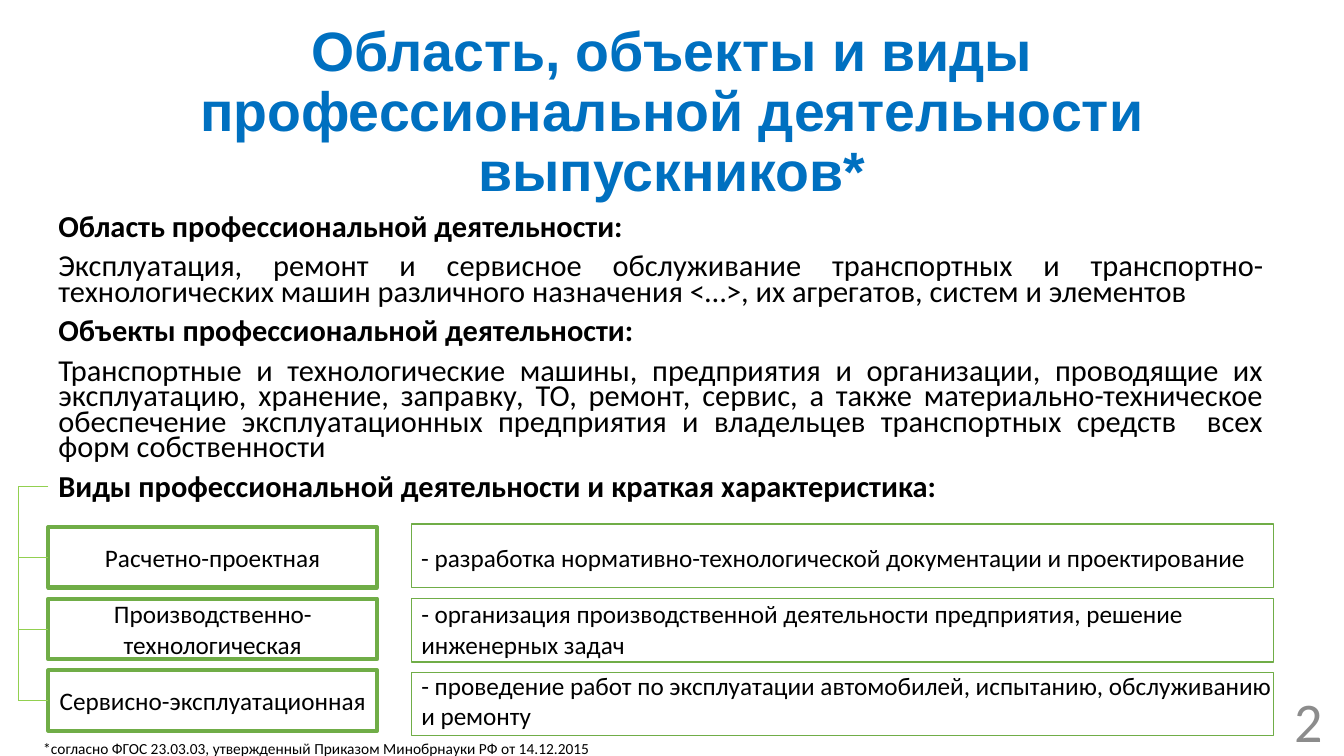
from lxml import etree
from pptx import Presentation
from pptx import util as u
from pptx.dml.color import RGBColor
from pptx.enum import shapes, text
from pptx.oxml.ns import qn

AL = text.PP_ALIGN
MIDDLE = text.MSO_ANCHOR.MIDDLE
BLACK, GREEN, LIME = "000000", "70AD47", "92D050"


def rgb(value):
    return RGBColor.from_string(value)


def write(sp, lines, size, color=BLACK, name="Calibri", anchor=text.MSO_ANCHOR.TOP, wrap=True, **para):
    tf = sp.text_frame
    tf.word_wrap = wrap
    tf.vertical_anchor = anchor
    for i, (line, bold) in enumerate(lines):
        p = tf.paragraphs[0] if i == 0 else tf.add_paragraph()
        for key, value in para.items():
            setattr(p, key, value)
        r = p.add_run()
        r.text = line
        for key, value in {"size": u.Pt(size), "name": name, "bold": bold}.items():
            setattr(r.font, key, value)
        r.font.color.rgb = rgb(color)


prs = Presentation()
prs.slide_width, prs.slide_height = u.Inches(13.33), u.Inches(7.5)
s = prs.slides.add_slide(prs.slide_layouts[6])

title = "Область, объекты и виды профессиональной деятельности выпускников*"
body = [
    ("Область профессиональной деятельности:", True),
    ("Эксплуатация, ремонт и сервисное обслуживание транспортных и транспортно-технологических машин "
     "различного назначения <…>, их агрегатов, систем и элементов", False),
    ("Объекты профессиональной деятельности:", True),
    ("Транспортные и технологические машины, предприятия и организации, проводящие их эксплуатацию, "
     "хранение, заправку, ТО, ремонт, сервис, а также материально-техническое обеспечение "
     "эксплуатационных предприятия и владельцев транспортных средств  всех форм собственности", False),
    ("Виды профессиональной деятельности и краткая характеристика:", True),
]
note = "*согласно ФГОС 23.03.03, утвержденный Приказом Минобрнауки РФ от 14.12.2015"

texts = [
    ((0.7, 0.4, 11.93, 1.45), [(title, True)], 39.6,
     dict(color="0070C0", name="Arial", anchor=MIDDLE, alignment=AL.CENTER, line_spacing=0.9)),
    ((0.48, 2.1, 12.15, 3.25), body, 21.7,
     dict(alignment=AL.JUSTIFY, line_spacing=0.7, space_before=u.Pt(10))),
    ((10.22, 6.94, 3, 0.4), [("2", False)], 40,
     dict(color="8C8C8C", anchor=MIDDLE, alignment=AL.RIGHT)),
    ((0.33, 7.28, 5.68, 0.29), [(note, False)], 11, dict(wrap=False)),
]
for box, lines, size, fmt in texts:
    write(s.shapes.add_textbox(*map(u.Inches, box)), lines, size, **fmt)

activities = [
    ("Расчетно-проектная",
     "- разработка нормативно-технологической документации и проектирование", 5.2, (5.33, 8.47, 0.4), False),
    ("Производственно-технологическая",
     "- организация производственной деятельности предприятия, решение инженерных задач",
     5.94, (5.89, 9.01, 0.71), True),
    ("Сервисно-эксплуатационная",
     "- проведение работ по эксплуатации автомобилей, испытанию, обслуживанию и ремонту",
     6.67, (6.6, 8.79, 0.71), True),
]
trunk_x, top_y, first_y, step = 0.18, 4.83, 5.23, 0.71
last_y = first_y + 2 * step + 0.3
links = [(0.48, top_y, trunk_x, top_y, None), (trunk_x, top_y, trunk_x, last_y, None)]

for i, (kind, detail, frame_y, (text_y, text_w, text_h), wrap) in enumerate(activities):
    y = first_y + i * step
    frames = []
    for box, width in [((4.08, frame_y, 8.55, 0.63), 1), ((0.48, y, 3.26, 0.6), 3)]:
        sp = s.shapes.add_shape(shapes.MSO_SHAPE.RECTANGLE, *map(u.Inches, box))
        sp.shadow.inherit = False
        sp.fill.solid()
        sp.fill.fore_color.rgb = rgb("FFFFFF")
        sp.line.color.rgb = rgb(GREEN)
        sp.line.width = u.Pt(width)
        frames.append(sp)
    write(frames[1], [(kind, False)], 18, anchor=MIDDLE, alignment=AL.CENTER)
    sp = s.shapes.add_textbox(*map(u.Inches, (4.08, text_y, text_w, text_h)))
    write(sp, [(detail, False)], 18, wrap=wrap)
    links.append((trunk_x, y + 0.3, 0.48, y + 0.3, frames[1]))

for x1, y1, x2, y2, target in links:
    line = s.shapes.add_connector(shapes.MSO_CONNECTOR.STRAIGHT, *map(u.Inches, (x1, y1, x2, y2)))
    line.line.color.rgb = rgb(LIME)
    line.line.width = u.Pt(0.5)
    etree.SubElement(line._element.spPr, qn("a:effectLst"))
    if target is not None:
        line.end_connect(target, 1)

prs.save("out.pptx")
